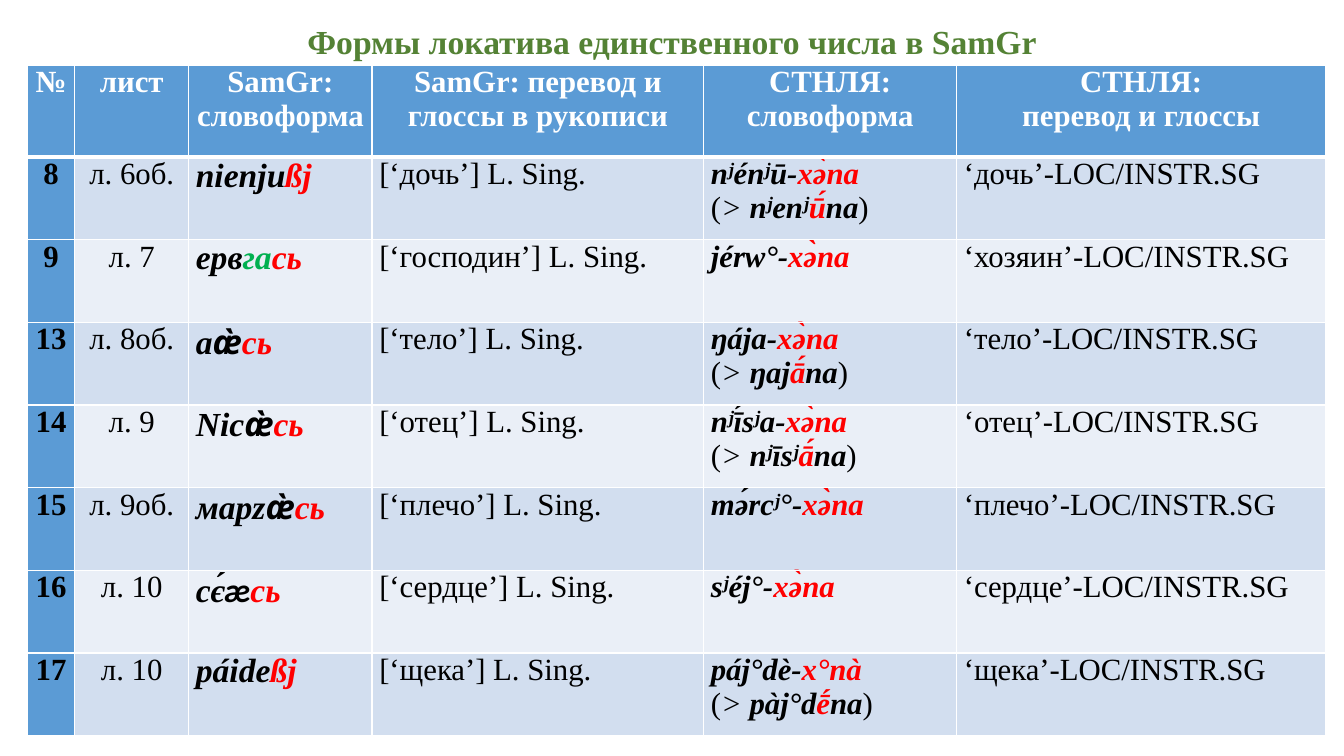
from dataclasses import dataclass

from lxml import etree
from pptx import Presentation, util as u
from pptx.dml.color import RGBColor
from pptx.enum import text as t
from pptx.oxml.ns import qn


@dataclass(frozen=True)
class Theme:
    serif: str = "Times New Roman"
    sans: str = "Calibri"
    title_size: int = 24
    form_size: int = 24
    body_size: int = 22
    title: str = "548235"
    header: str = "5B9BD5"
    bands: tuple = ("D2DEEF", "EAEFF7")
    white: str = "FFFFFF"
    ink: str = "000000"
    ending: str = "FF0000"
    suffix: str = "00B050"


THEME = Theme()
CENTER, LEFT, JUSTIFY = t.PP_ALIGN.CENTER, t.PP_ALIGN.LEFT, t.PP_ALIGN.JUSTIFY
ALIGNMENTS = (CENTER, CENTER, LEFT, LEFT, LEFT, JUSTIFY)
COLUMN_WIDTHS = (33.84, 81.36, 131.04, 236.88, 180.72, 263.52)
HEADER_HEIGHT, ROW_HEIGHT = 65.5, 59.04

STEM = dict(bold=True, italic=True)
ENDING = dict(STEM, color=THEME.ending)
SUFFIX = dict(STEM, color=THEME.suffix)
LIGATURE = dict(STEM, font=THEME.sans)

HEADERS = (
    ["№"], ["лист"], ["SamGr:", "cловоформа"], ["SamGr: перевод и глоссы в рукописи"],
    ["СТНЛЯ:", "cловоформа"], ["СТНЛЯ:", "перевод и глоссы"],
)

# number, sheet, manuscript form, gloss, modern stem and ending, contracted stem and vowel
WORDS = (
    ("8", "6об.", [("nienju", STEM), ("ßj", ENDING)],
     "дочь", ("nʲénʲū-", "xə̀na"), ("nʲenʲ", "ū́")),
    ("9", "7", [("ерв", STEM), ("га", SUFFIX), ("сь", ENDING)],
     "хозяин", ("jérw°-", "xə̀na"), None),
    ("13", "8об.", [("а", STEM), ("æ̀", LIGATURE), ("сь", ENDING)],
     "тело", ("ŋája-", "xə̀na"), ("ŋaj", "ā́")),
    ("14", "9", [("Nic", STEM), ("æ̀", LIGATURE), ("сь", ENDING)],
     "отец", ("nʲī́sʲa-", "xə̀na"), ("nʲīsʲ", "ā́")),
    ("15", "9об.", [("марz", STEM), ("æ̀", LIGATURE), ("сь", ENDING)],
     "плечо", ("mə́rcʲ°-", "xə̀na"), None),
    ("16", "10", [("cє́", STEM), ("æ", LIGATURE), ("сь", ENDING)],
     "сердце", ("sʲéj°-", "xə̀na"), None),
    ("17", "10", [("páide", STEM), ("ßj", ENDING)],
     "щека", ("páj°dè-", "x°nà"), ("pàj°d", "ḗ")),
)
MANUSCRIPT_GLOSSES = {"хозяин": "господин"}


def add_span(para, text, size=THEME.body_size, font=THEME.serif, color=THEME.ink,
             bold=False, italic=False):
    span = para.add_run()
    span.text = text
    span.font.size = u.Pt(size)
    span.font.name = font
    span.font.bold = bold
    span.font.italic = italic
    span.font.color.rgb = RGBColor.from_string(color)


def modern_lines(form, contraction):
    """Return the modern form and, if there is one, its contracted variant below."""
    stem, ending = form
    lines = [[(stem, STEM), (ending, ENDING)]]
    if contraction:
        base, vowel = contraction
        lines.append([("(", {}), ("> ", dict(italic=True)), (base, STEM),
                      (vowel, ENDING), ("na", STEM), (")", {})])
    return lines


def word_cells(number, sheet, manuscript, gloss, form, contraction):
    """Return one table row: for each cell, lines made of (text, format) pairs."""
    manuscript_gloss = MANUSCRIPT_GLOSSES.get(gloss, gloss)
    return (
        [[(number, dict(bold=True))]],
        [[(f"л. {sheet}", {})]],
        [[(text, dict(style, size=THEME.form_size)) for text, style in manuscript]],
        [[(f"[‘{manuscript_gloss}’] L. Sing.", {})]],
        modern_lines(form, contraction),
        [[(f"‘{gloss}’-LOC/INSTR.SG", {})]],
    )


class SlideBuilder:
    def __init__(self, slide, theme):
        self.slide = slide
        self.theme = theme

    def title(self, text, left, top, width, height):
        box = self.slide.shapes.add_textbox(*map(u.Pt, (left, top, width, height)))
        frame = box.text_frame
        frame.word_wrap = True
        frame.vertical_anchor = t.MSO_ANCHOR.MIDDLE
        para = frame.paragraphs[0]
        para.alignment = CENTER
        para.line_spacing = 0.9
        add_span(para, text, size=self.theme.title_size, color=self.theme.title, bold=True)

    def borders(self, cell, **widths):
        """Draw white edges; widths are keyed by L, R, T and B."""
        properties = cell._tc.get_or_add_tcPr()
        for index, (side, width) in enumerate(widths.items()):
            line = etree.Element(qn(f"a:ln{side}"), w=str(u.Pt(width)))
            fill = etree.SubElement(line, qn("a:solidFill"))
            etree.SubElement(fill, qn("a:srgbClr"), val=self.theme.white)
            properties.insert(index, line)

    def cell(self, cell, lines, fill, alignment, top=1, bottom=1):
        cell.margin_left = cell.margin_right = u.Pt(5.15)
        cell.margin_top = cell.margin_bottom = 0
        cell.fill.solid()
        cell.fill.fore_color.rgb = RGBColor.from_string(fill)
        self.borders(cell, L=1, R=1, T=top, B=bottom)
        frame = cell.text_frame
        for index, line in enumerate(lines):
            para = frame.add_paragraph() if index else frame.paragraphs[0]
            para.alignment = alignment
            for text, style in line:
                add_span(para, text, **style)

    def table(self, left, top, headers, rows):
        heights = [HEADER_HEIGHT] + [ROW_HEIGHT] * len(rows)
        size = sum(COLUMN_WIDTHS), sum(heights)
        table = self.slide.shapes.add_table(
            len(heights), len(headers), *map(u.Pt, (left, top, *size))).table
        table.first_col = True
        for column, width in zip(table.columns, COLUMN_WIDTHS):
            column.width = u.Pt(width)
        for row, height in zip(table.rows, heights):
            row.height = u.Pt(height)

        heading = dict(color=self.theme.white, bold=True)
        for column, texts in enumerate(headers):
            lines = [[(text, heading)] for text in texts]
            self.cell(table.cell(0, column), lines, self.theme.header, CENTER, bottom=3)
        for index, cells in enumerate(rows):
            band = self.theme.bands[index % 2]
            for column, lines in enumerate(cells):
                self.cell(table.cell(index + 1, column), lines,
                          band if column else self.theme.header,
                          ALIGNMENTS[column], top=1 if index else 3)


def main():
    deck = Presentation()
    deck.slide_width, deck.slide_height = u.Pt(960), u.Pt(540)
    page = SlideBuilder(deck.slides.add_slide(deck.slide_layouts[6]), THEME)
    page.table(19.6, 46.8, HEADERS, [word_cells(*word) for word in WORDS])
    page.title("Формы локатива единственного числа в SamGr", 66, 15.6, 828, 31)
    deck.save("out.pptx")


if __name__ == "__main__":
    main()
